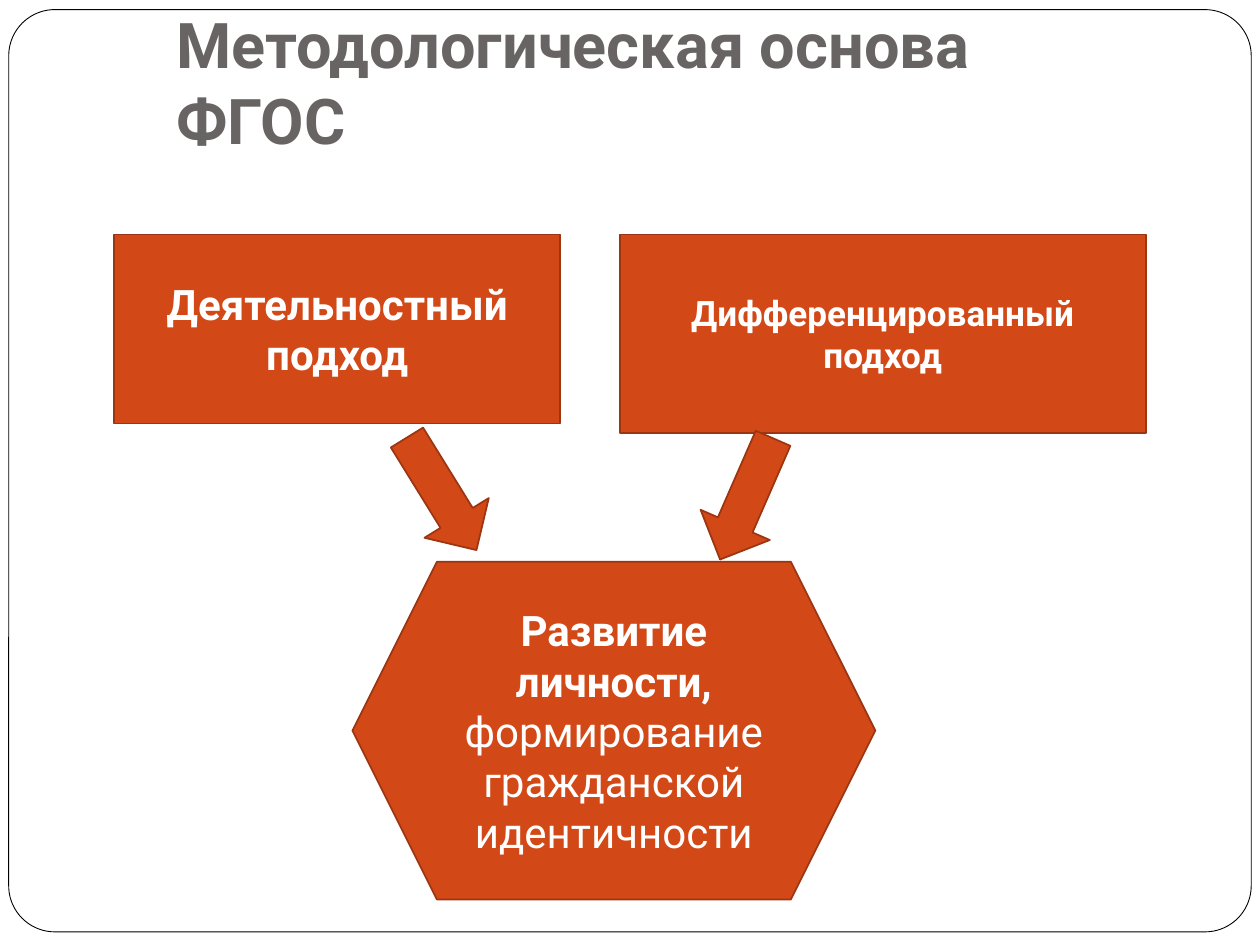
from pptx import Presentation
from pptx import util as u
from pptx.dml.color import RGBColor
from pptx.enum import shapes, text

HUES = {"paper": "FFFFFF", "frame": "000000", "title": "696464",
        "fill": "D34817", "edge": "9C3511", "label": "FFFFFF"}
KIND = shapes.MSO_SHAPE


class Deck:
    """Holds the style and the current slide."""
    face = "Roboto"

    def __init__(self):
        self.prs = Presentation()
        self.prs.slide_width, self.prs.slide_height = u.Pt(720), u.Pt(540)
        self.slide = self.prs.slides.add_slide(self.prs.slide_layouts[5])

    def hue(self, name):
        return RGBColor.from_string(HUES[name])

    def put(self, item, vals):
        for key, val in vals.items():
            setattr(item, key, val)

    def place(self, shape, box):
        sides = ("left", "top", "width", "height")
        self.put(shape, {k: u.Pt(v) for k, v in zip(sides, box)})

    def label(self, shape, runs, size, hue, align, anchor):
        frame = shape.text_frame
        self.put(frame, {"word_wrap": True, "vertical_anchor": anchor,
                         "auto_size": text.MSO_AUTO_SIZE.NONE})
        par = frame.paragraphs[0]
        par.alignment = align
        for words, bold in runs:
            run = par.add_run()
            run.text = words
            self.put(run.font, {"name": self.face, "size": u.Pt(size), "bold": bold})
            run.font.color.rgb = self.hue(hue)

    def title(self, words, box):
        shape = self.slide.shapes.title
        self.place(shape, box)
        self.label(shape, [(words, True)], 36, "title",
                   text.PP_ALIGN.LEFT, text.MSO_ANCHOR.BOTTOM)
        shape.text_frame.margin_bottom = u.Pt(7.2)

    def shape(self, kind, box, fill="fill", edge="edge", width=1, turn=0):
        shape = self.slide.shapes.add_shape(kind, *map(u.Pt, box))
        shape.shadow.inherit = False
        shape.rotation = turn
        shape.fill.solid()
        shape.fill.fore_color.rgb = self.hue(fill)
        shape.line.color.rgb = self.hue(edge)
        shape.line.width = u.Pt(width)
        return shape

    def frame(self, box):
        shape = self.shape(KIND.ROUNDED_RECTANGLE, box, "paper", "frame", 0.5)
        shape.adjustments[0] = 0.05
        # Send the frame behind the title
        self.slide.shapes.title._element.addprevious(shape._element)

    def block(self, kind, box, runs, size):
        self.label(self.shape(kind, box), runs, size, "label",
                   text.PP_ALIGN.CENTER, text.MSO_ANCHOR.MIDDLE)

    def arrow(self, left, top, turn):
        self.shape(KIND.RIGHT_ARROW, (left, top, 75.6, 43.2), turn=turn)


def main():
    deck = Deck()

    # Frame and title
    deck.frame((5, 5.5, 710, 527))
    deck.title("Методологическая основа ФГОС", (93.6, -13, 561.6, 110))

    # Two approaches
    deck.block(KIND.RECTANGLE, (65.2, 134, 255, 108),
               [("Деятельностный подход", True)], 24)
    deck.block(KIND.RECTANGLE, (354.2, 134, 300.5, 113.4),
               [("Дифференцированный подход", True)], 20)

    # Shared result
    deck.block(KIND.HEXAGON, (201.4, 321, 298.8, 193),
               [("Развитие личности, ", True),
                ("формирование гражданской идентичности", False)], 24)

    # Arrows to the result
    deck.arrow(214.6, 260.6, 58.3)
    deck.arrow(388.8, 263.5, 113.6)

    deck.prs.save("out.pptx")


if __name__ == "__main__":
    main()
